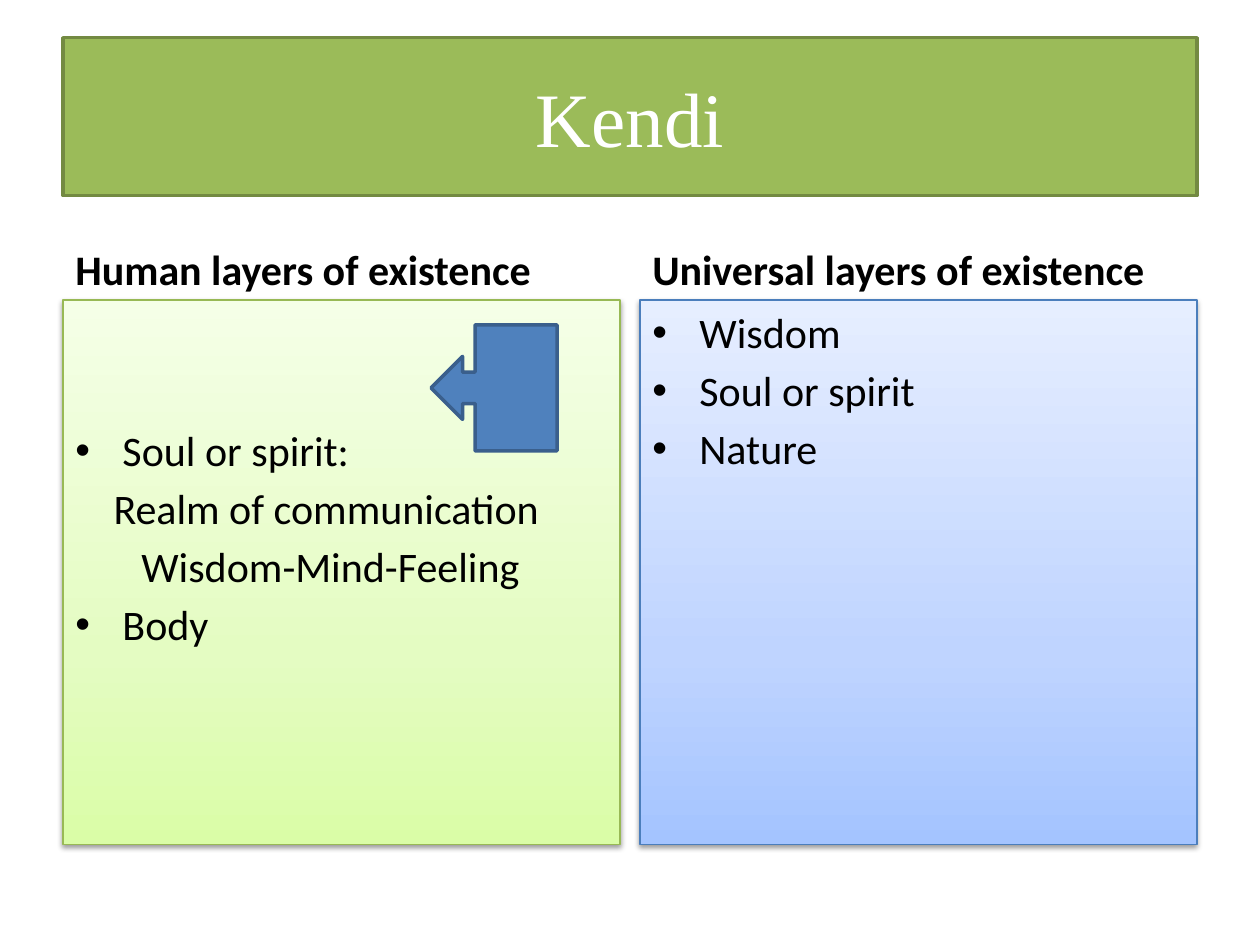
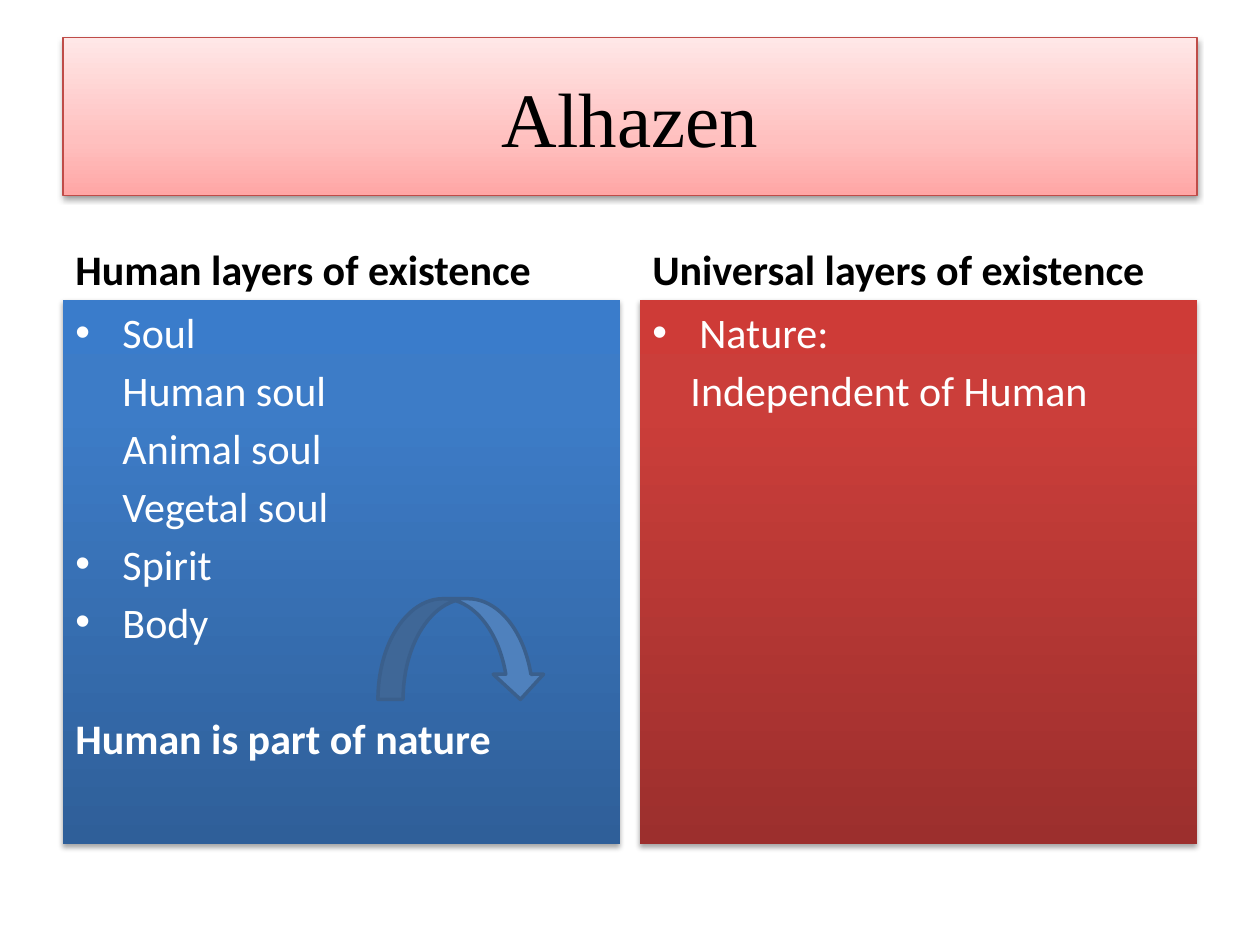
from lxml import etree
from pptx import Presentation
from pptx.dml.color import RGBColor
from pptx.enum.shapes import MSO_SHAPE
from pptx.enum.text import MSO_ANCHOR, PP_ALIGN
from pptx.oxml.ns import qn
from pptx.util import Cm, Pt

RECTANGLE = MSO_SHAPE.RECTANGLE
LEFT_CALLOUT = MSO_SHAPE.LEFT_ARROW_CALLOUT
CURVED_ARROW = MSO_SHAPE.CURVED_DOWN_ARROW
TOP, MIDDLE, BOTTOM = MSO_ANCHOR.TOP, MSO_ANCHOR.MIDDLE, MSO_ANCHOR.BOTTOM
LEFT, CENTER = PP_ALIGN.LEFT, PP_ALIGN.CENTER

COLORS = {
    "black": "000000", "white": "FFFFFF",
    "green": "9BBB59", "green edge": "738A42",
    "blue": "4F81BD", "blue edge": "3A5F8C",
}

# Looks: gradient stops from bottom to top, edge colour, text colour, shadow (alpha %, distance pt)
LOOKS = {
    "solid green": dict(fill=COLORS["green"], edge=COLORS["green edge"], width=2, text="white"),
    "solid blue": dict(fill=COLORS["blue"], edge=COLORS["blue edge"], width=2, text="white"),
    "pale green": dict(stops=[(0, "DAFDA7"), (35, "E4FCC2"), (100, "F5FFE7")],
                       edge="98B955", width=0.75, text="black", shadow=(38, 1.6)),
    "pale blue": dict(stops=[(0, "A4C4FF"), (35, "BFD4FF"), (100, "E6EEFF")],
                      edge="4B7EBC", width=0.75, text="black", shadow=(38, 1.6)),
    "pale red": dict(stops=[(0, "FFA6A5"), (35, "FFC0BF"), (100, "FFE7E7")],
                     edge="BF4C48", width=0.75, text="black", shadow=(38, 1.6)),
    "deep blue": dict(stops=[(0, "2F5F99"), (80, "3D7CC7"), (100, "3A7CCB")],
                      text="white", shadow=(35, 1.8)),
    "deep red": dict(stops=[(0, "9C2F2D"), (80, "CB3E3A"), (100, "CE3B37")],
                     text="white", shadow=(35, 1.8)),
}

# Shared layout
COLUMN_LEFTS = [Cm(1.27), Cm(12.9)]
COLUMN_WIDTH = Cm(11.23)
HEADINGS = ["Human layers of existence", "Universal layers of existence"]
BULLET_INDENT = 0.95
LINE_GAP, BLANK_LINE = 4.3, 33.6

# Panel lines: text, indent in cm (None for a bullet)
PAGES = [
    dict(title="Kendi", band="solid green",
         panels=[("pale green", 2.51, [("Soul or spirit:", None),
                                       ("Realm of communication", 0.77),
                                       ("Wisdom-Mind-Feeling", 1.33),
                                       ("Body", None)]),
                 ("pale blue", 0.13, [("Wisdom", None), ("Soul or spirit", None),
                                      ("Nature", None)])],
         arrow=(LEFT_CALLOUT, Cm(8.69), Cm(6.55), Cm(2.54), Cm(2.54))),
    dict(title="Alhazen", band="pale red",
         panels=[("deep blue", 0.13, [("Soul", None), ("Human soul", 0.95),
                                      ("Animal soul", 0.95), ("Vegetal soul", 0.95),
                                      ("Spirit", None), ("Body", None),
                                      ("Human is part of nature", 0)]),
                 ("deep red", 0.13, [("Nature:", None), ("Independent of Human", 0.77)])],
         arrow=(CURVED_ARROW, Cm(7.62), Cm(12.07), Cm(3.38), Cm(2.03))),
]


def apply_look(shape, look):
    """Set fill, edge and shadow of a shape."""
    if "stops" in look:
        shape.fill.gradient()
        shape.fill.gradient_angle = 90
        stop_list = shape.fill._xPr.find(".//" + qn("a:gsLst"))
        stop_list.clear()
        for percent, color in look["stops"]:
            stop = etree.SubElement(stop_list, qn("a:gs"), pos=str(percent * 1000))
            etree.SubElement(stop, qn("a:srgbClr"), val=color)
    else:
        shape.fill.solid()
        shape.fill.fore_color.rgb = RGBColor.from_string(look["fill"])
    if "edge" in look:
        shape.line.color.rgb = RGBColor.from_string(look["edge"])
        shape.line.width = Pt(look["width"])
    else:
        shape.line.fill.background()
    shape.shadow.inherit = False
    if "shadow" in look:
        alpha, distance = look["shadow"]
        effects = shape._element.spPr.find(qn("a:effectLst"))
        shadow = etree.SubElement(effects, qn("a:outerShdw"), blurRad=str(Pt(3.1)),
                                  dist=str(Pt(distance)), dir="5400000", rotWithShape="0")
        tint = etree.SubElement(shadow, qn("a:srgbClr"), val=COLORS["black"])
        etree.SubElement(tint, qn("a:alpha"), val=str(alpha * 1000))


def add_span(para, text, color, size=24, font="Calibri", bold=False):
    """Add one formatted run to a paragraph."""
    span = para.add_run()
    span.text = text
    span.font.name = font
    span.font.size = Pt(size)
    span.font.bold = bold
    span.font.color.rgb = RGBColor.from_string(COLORS[color])


deck = Presentation()
deck.slide_width, deck.slide_height = Cm(25.4), Cm(19.05)

for content in PAGES:
    page = deck.slides.add_slide(deck.slide_layouts[5])

    # Title band
    title = page.shapes.title
    title.left, title.top, title.width, title.height = Cm(1.27), Cm(0.76), Cm(22.86), Cm(3.18)
    band = LOOKS[content["band"]]
    apply_look(title, band)
    title.text_frame.vertical_anchor = MIDDLE
    para = title.text_frame.paragraphs[0]
    para.alignment = CENTER
    add_span(para, content["title"], band["text"], 44, "Times New Roman")

    # Column headings
    for left, heading in zip(COLUMN_LEFTS, HEADINGS):
        box = page.shapes.add_textbox(left, Cm(4.27), COLUMN_WIDTH, Cm(1.78))
        box.text_frame.word_wrap = True
        box.text_frame.vertical_anchor = BOTTOM
        add_span(box.text_frame.paragraphs[0], heading, "black", bold=True)

    # Column panels
    for left, (look_name, top_margin, lines) in zip(COLUMN_LEFTS, content["panels"]):
        look = LOOKS[look_name]
        panel = page.shapes.add_shape(RECTANGLE, left, Cm(6.05), COLUMN_WIDTH, Cm(10.97))
        apply_look(panel, look)
        frame = panel.text_frame
        frame.word_wrap = True
        frame.vertical_anchor = TOP
        frame.margin_top = Cm(top_margin)
        for number, (text, indent) in enumerate(lines):
            para = frame.add_paragraph() if number else frame.paragraphs[0]
            para.alignment = LEFT
            is_closing = indent == 0
            gap = LINE_GAP + (LINE_GAP + BLANK_LINE - LINE_GAP if is_closing else 0)
            para.space_before = Pt(gap if number else 0)
            properties = para._p.get_or_add_pPr()
            if indent is None:
                properties.set("marL", str(Cm(BULLET_INDENT)))
                properties.set("indent", str(-Cm(BULLET_INDENT)))
                etree.SubElement(properties, qn("a:buFont"), typeface="Arial")
                etree.SubElement(properties, qn("a:buChar"), char="•")
            else:
                properties.set("marL", str(Cm(indent)))
                properties.set("indent", "0")
            add_span(para, text, look["text"], bold=is_closing)

    # Arrow over the left panel
    arrow = page.shapes.add_shape(*content["arrow"])
    apply_look(arrow, LOOKS["solid blue"])

deck.save("out.pptx")
